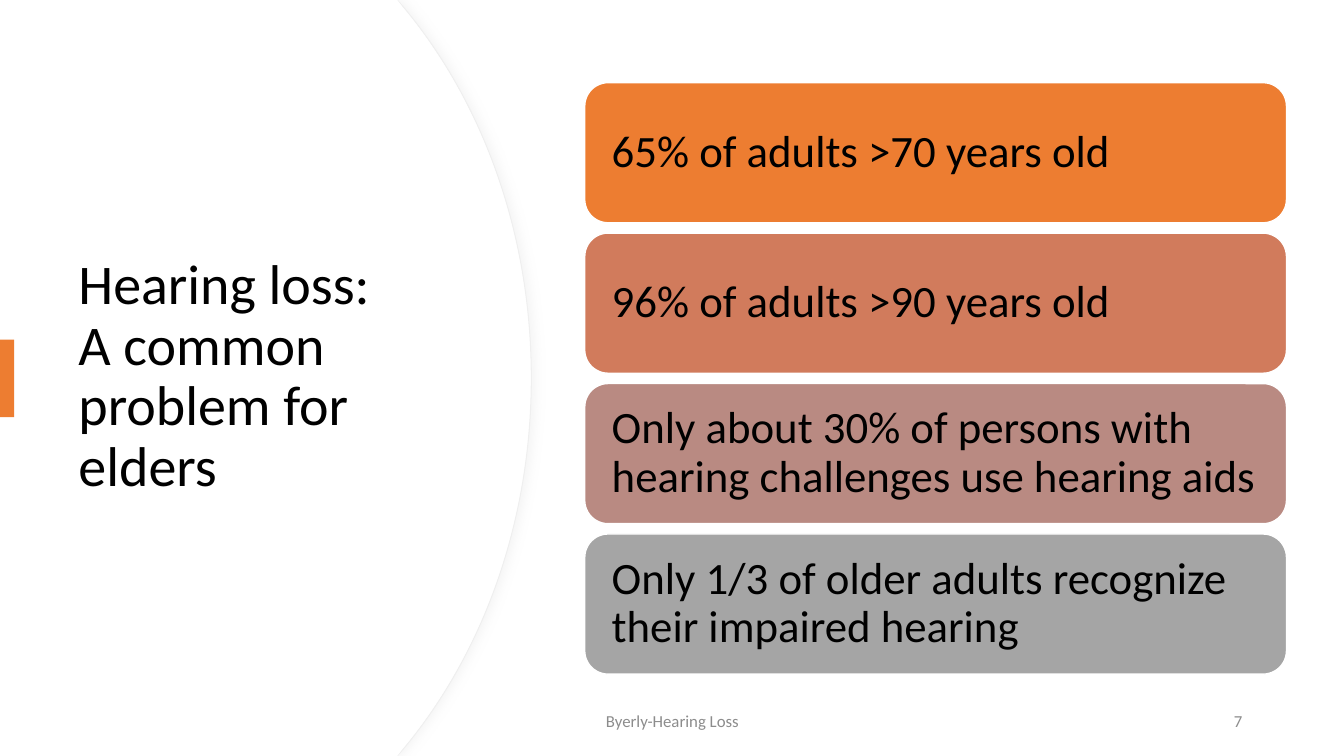
from lxml.etree import SubElement
from pptx import Presentation
from pptx.dml.color import RGBColor as Rgb
from pptx.enum.shapes import MSO_SHAPE as Preset
from pptx.enum.text import MSO_ANCHOR as Anchor, PP_ALIGN as Align
from pptx.oxml.ns import qn
from pptx.util import Emu, Pt

EMU_PER_PX = 9144
SLIDE_WIDTH, SLIDE_HEIGHT = 1333, 750
COLORS = {
    "white": "FFFFFF",
    "edge": "EFEFEF",
    "shadow": "D9D9D9",
    "text": "000000",
    "footer": "8C8C8C",
    "accent": "ED7D31",
}
FACTS = [
    ("65% of adults >70 years old", "ED7D31"),
    ("96% of adults >90 years old", "D17B5C"),
    ("Only about 30% of persons with hearing challenges use hearing aids", "B98A82"),
    ("Only 1/3 of older adults recognize their impaired hearing", "A5A5A5"),
]


def px(length):
    """Turn a length in px into EMU."""
    return Emu(round(length * EMU_PER_PX))


def paint(shape, fill, line=None, width=1):
    """Set the fill and outline of a shape and drop its theme shadow."""
    shape.shadow.inherit = False
    shape.fill.solid()
    shape.fill.fore_color.rgb = Rgb.from_string(fill)
    if line:
        shape.line.color.rgb = Rgb.from_string(line)
        shape.line.width = Pt(width)
    else:
        shape.line.fill.background()


def write(shape, text, size, color=COLORS["text"], align=Align.LEFT, spacing=1.0, inset=(10, 5)):
    """Put formatted, vertically centred text into a shape."""
    frame = shape.text_frame
    frame.word_wrap = True
    frame.vertical_anchor = Anchor.MIDDLE
    frame.margin_left = frame.margin_right = px(inset[0])
    frame.margin_top = frame.margin_bottom = px(inset[1])
    paragraph = frame.paragraphs[0]
    paragraph.text = text
    paragraph.alignment = align
    paragraph.line_spacing = spacing
    paragraph.font.size = Pt(size)
    for run in paragraph.runs:
        run.font.name = "Calibri"
        run.font.size = Pt(size)
        run.font.color.rgb = Rgb.from_string(color)


def add_label(slide, box, text, **style):
    """Add a text box with one formatted paragraph."""
    write(slide.shapes.add_textbox(*map(px, box)), text, **style)


def add_block(slide, preset, box, fill, **outline):
    """Add a filled preset shape."""
    block = slide.shapes.add_shape(preset, *map(px, box))
    paint(block, fill, **outline)
    return block


def bend(shape, first, count):
    """Turn runs of three line segments into cubic curves, from segment first on."""
    segments = list(shape.element.iter(qn("a:lnTo")))
    for start in range(first, first + 3 * count, 3):
        trio = segments[start:start + 3]
        trio[0].tag = qn("a:cubicBezTo")
        for segment in trio[1:]:
            trio[0].append(segment[0])
            segment.getparent().remove(segment)


def add_panel(slide, right, **outline):
    """Add the white title panel with its bulging right edge."""
    upper = [(394, 0), (right - 126, 8), (right - 48, 102), (right, 232)]
    lower = [(x, SLIDE_HEIGHT - y) for x, y in reversed(upper)]
    corners = upper + [(right, SLIDE_HEIGHT / 2)] + lower + [(0, SLIDE_HEIGHT)]
    builder = slide.shapes.build_freeform(0, 0)
    builder.add_line_segments([(px(x), px(y)) for x, y in corners], close=True)
    panel = builder.convert_to_shape()
    bend(panel, first=2, count=2)
    paint(panel, COLORS["white"], **outline)
    return panel


def cast_shadow(shape, color, opacity, blur, distance):
    """Give a shape a soft shadow to its right."""
    effects = shape.element.spPr.find(qn("a:effectLst"))
    shadow = SubElement(
        effects, qn("a:outerShdw"), blurRad=str(Pt(blur)), dist=str(Pt(distance)),
        dir="0", algn="l", rotWithShape="0",
    )
    tint = SubElement(shadow, qn("a:srgbClr"), val=color)
    SubElement(tint, qn("a:alpha"), val=str(opacity * 1000))


def add_facts(slide):
    """Stack the fact cards at equal steps."""
    for index, (fact, fill) in enumerate(FACTS):
        card = add_block(
            slide, Preset.ROUNDED_RECTANGLE, (580, 82 + 149.25 * index, 696, 139),
            fill, line=COLORS["white"],
        )
        write(card, fact, size=32, spacing=0.9, inset=(20, 13))


def main():
    """Build the slide and save it."""
    deck = Presentation()
    deck.slide_width, deck.slide_height = px(SLIDE_WIDTH), px(SLIDE_HEIGHT)
    slide = deck.slides.add_slide(deck.slide_layouts[6])
    panel = add_panel(slide, 527, line=COLORS["edge"], width=0.75)
    cast_shadow(panel, COLORS["shadow"], opacity=25, blur=7, distance=3)
    add_panel(slide, 526)
    add_label(
        slide, (68, 127, 394, 495), "Hearing loss: \nA common problem for elders",
        size=40, spacing=0.9,
    )
    add_block(slide, Preset.RECTANGLE, (0, 337, 14, 77), COLORS["accent"])
    add_facts(slide)
    add_label(
        slide, (442, 695, 450, 40), "Byerly-Hearing Loss",
        size=12, color=COLORS["footer"], align=Align.CENTER,
    )
    add_label(
        slide, (942, 695, 300, 40), "7",
        size=12, color=COLORS["footer"], align=Align.RIGHT,
    )
    deck.save("out.pptx")


if __name__ == "__main__":
    main()
